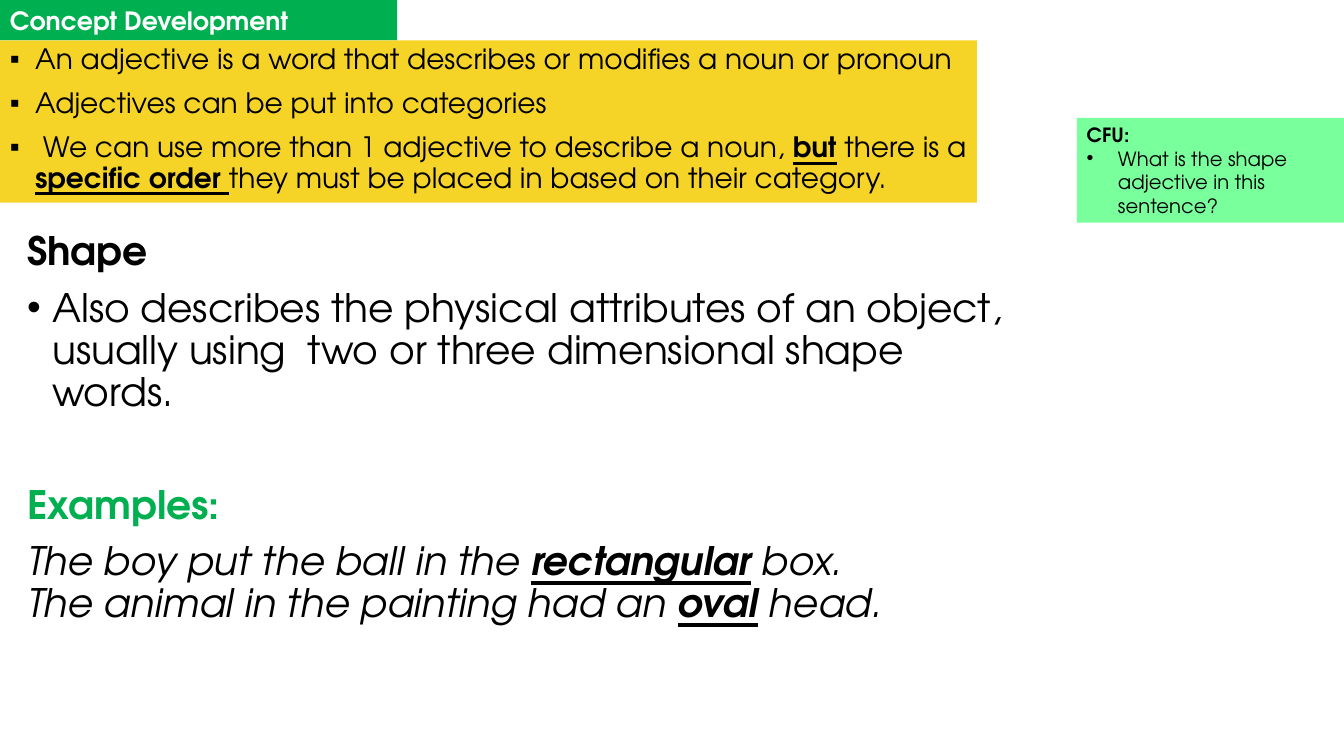
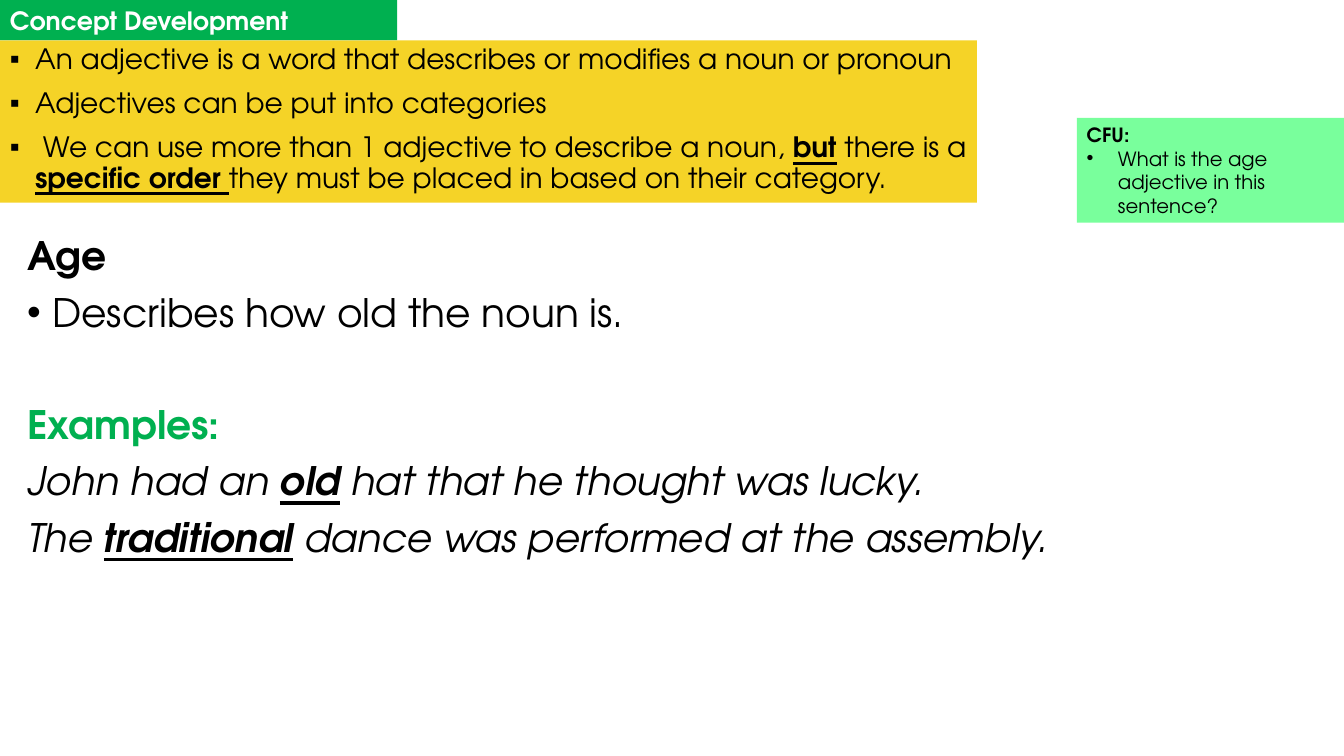
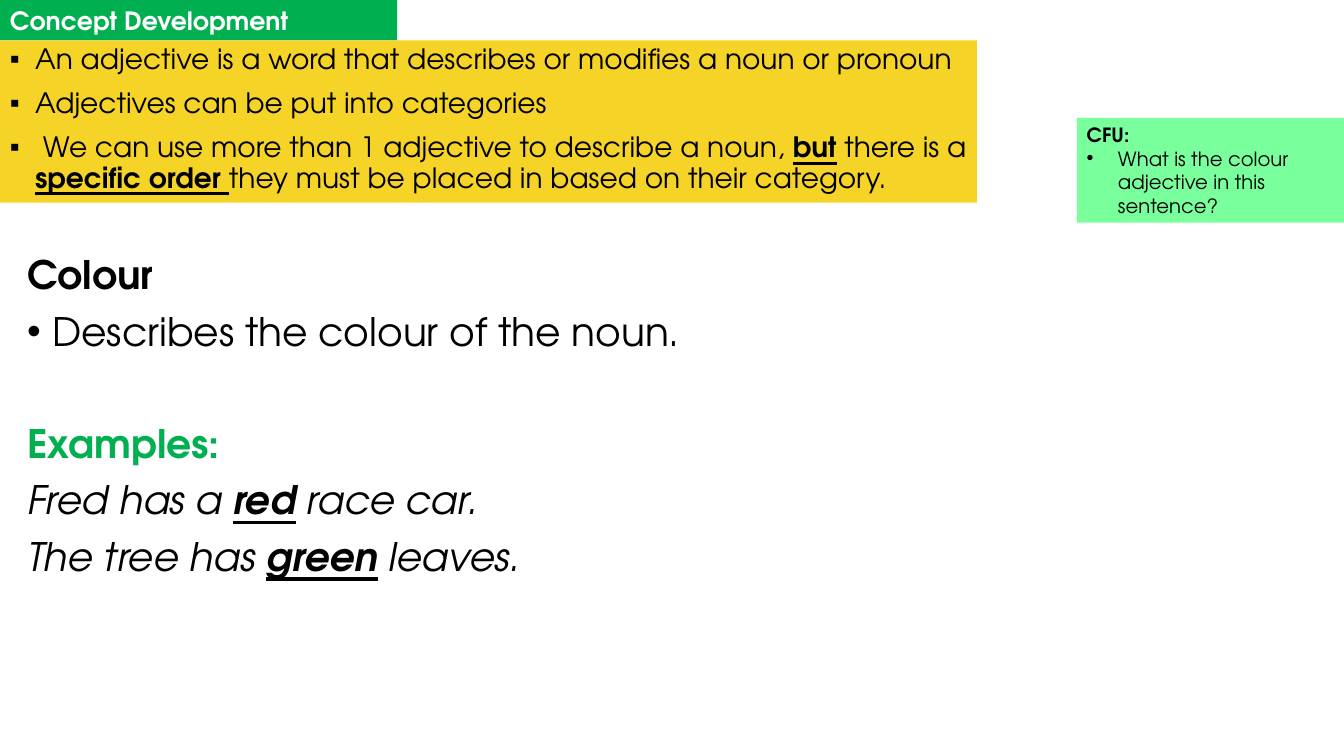
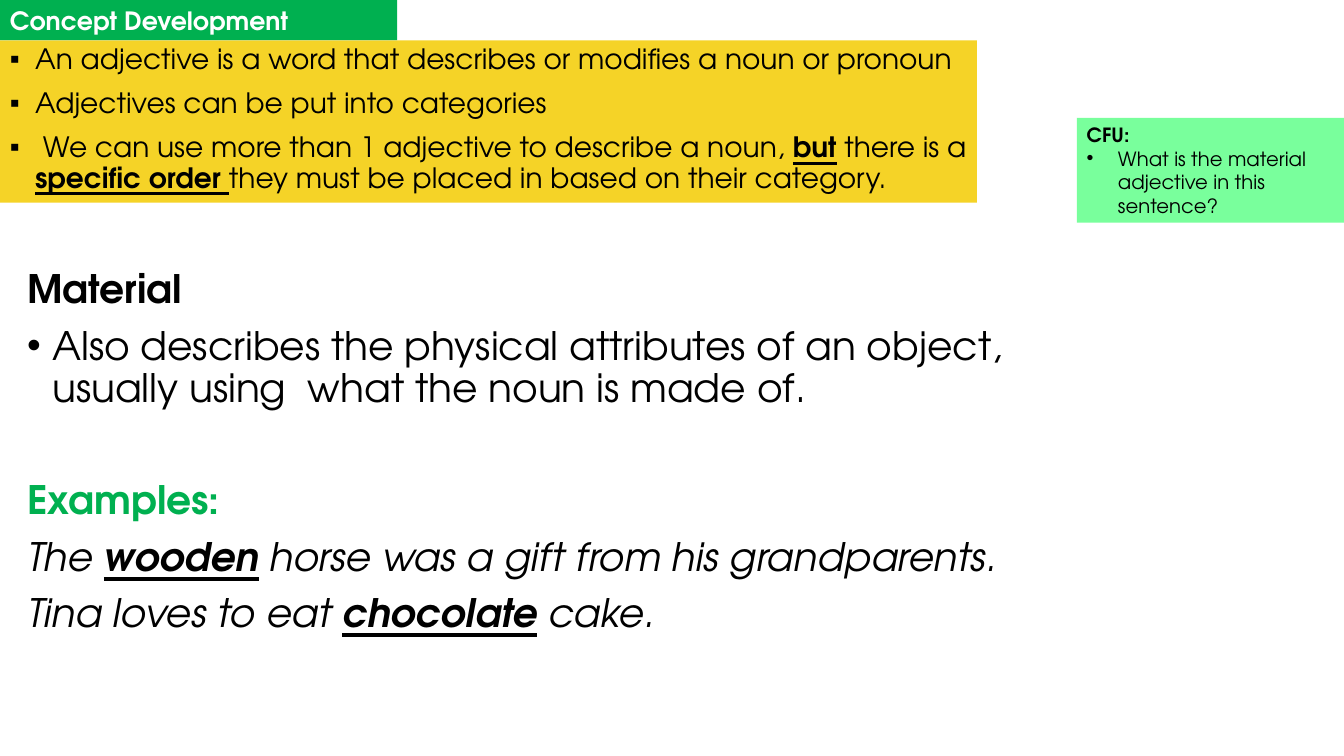
"""Build four lesson slides on kinds of adjectives."""
import pptx
import pptx.util
import pptx.dml.color
import pptx.enum.shapes
import pptx.enum.text
import pptx.oxml.ns
import lxml.etree

WIDE, HIGH = 13.33, 7.5
FONT = "TeX Gyre Adventor"
BLACK, WHITE, GREEN = "000000", "FFFFFF", "00B050"
GOLD, MINT = "F5D327", "79FF9C"

TITLE = "Concept Development"
RULES = [
    "An adjective is a word that describes or modifies a noun or pronoun",
    "Adjectives can be put into categories",
    " We can use more than 1 adjective to describe a noun, *but* there is a "
    "*specific order *they must be placed in based on their category.",
]
TOPICS = [
    dict(name="Shape", top=2.25, width=10.14,
         about="Also describes the physical attributes of an object, "
               "usually using  two or three dimensional shape words.",
         cases=["The boy put the ball in the *rectangular* box.\n"
                "The animal in the painting had an *oval* head."]),
    dict(name="Age", top=2.3, width=12.95,
         about="Describes how old the noun is.",
         cases=["John had an *old* hat that he thought was lucky.",
                "The *traditional* dance was performed at the assembly."]),
    dict(name="Colour", top=2.49, width=12.95,
         about="Describes the colour of the noun.",
         cases=["Fred has a *red* race car.",
                "The tree has *green* leaves."]),
    dict(name="Material", top=2.63, width=10.69,
         about="Also describes the physical attributes of an object, "
               "usually using  what the noun is made of.",
         cases=["The *wooden* horse was a gift from his grandparents.",
                "Tina loves to eat *chocolate* cake."]),
]


def paint(hue):
    return pptx.dml.color.RGBColor.from_string(hue)


def add_box(slide, left, top, width, height, fill=None):
    area = [pptx.util.Inches(n) for n in (left, top, width, height)]
    if fill:
        box = slide.shapes.add_shape(
            pptx.enum.shapes.MSO_SHAPE.RECTANGLE, *area)
        box.shadow.inherit = False
        box.fill.solid()
        box.fill.fore_color.rgb = paint(fill)
        box.line.fill.background()
    else:
        box = slide.shapes.add_textbox(*area)
    frame = box.text_frame
    frame.word_wrap = True
    frame.vertical_anchor = pptx.enum.text.MSO_ANCHOR.TOP
    return frame


def add_bullet(para, mark, indent):
    props = para._p.get_or_add_pPr()
    step = pptx.util.Inches(indent)
    props.set("marL", str(step))
    props.set("indent", str(-step))
    for tag, key, value in (("buFont", "typeface", "Arial"),
                            ("buChar", "char", mark)):
        lxml.etree.SubElement(
            props, pptx.oxml.ns.qn("a:" + tag)).set(key, value)


def add_para(frame, text, size, hue=BLACK, bold=False, italic=False,
             mark=None, indent=0.25, line=1.0, before=0):
    first = frame.paragraphs[0]
    fresh = not first.runs
    para = first if fresh else frame.add_paragraph()
    para.alignment = pptx.enum.text.PP_ALIGN.LEFT
    para.line_spacing = line
    para.space_before = pptx.util.Pt(0 if fresh else before)
    if mark:
        add_bullet(para, mark, indent)
    para.font.size = pptx.util.Pt(size)
    for row, words in enumerate(text.split("\n")):
        if row:
            para.add_line_break()
        for part, piece in enumerate(words.split("*")):
            strong = part % 2 == 1
            run = para.add_run()
            run.text = piece
            font = run.font
            font.name, font.size = FONT, pptx.util.Pt(size)
            font.color.rgb = paint(hue)
            font.bold, font.italic = bold or strong, italic
            font.underline = strong


def add_frame(slide, name):
    band = add_box(slide, 0, 0.4, 9.69, 1.61, GOLD)
    for rule in RULES:
        add_para(band, rule, 20, mark="▪", line=0.9, before=10)
    head = add_box(slide, 0, 0, 3.94, 0.4, GREEN)
    add_para(head, TITLE, 18, WHITE, bold=True)
    check = add_box(slide, WIDE - 2.65, 1.17, 2.65, 1.04, MINT)
    add_para(check, "CFU:", 14, bold=True)
    add_para(check, f"What is the {name.lower()} adjective in this sentence?",
             14, mark="•", indent=0.31)


def add_topic(slide, topic):
    top = topic["top"]
    body = add_box(slide, 0.17, top, topic["width"], HIGH - 0.2 - top)
    look = dict(size=28, line=0.9, before=10)
    add_para(body, topic["name"], bold=True, **look)
    add_para(body, topic["about"], mark="•", **look)
    add_para(body, "Examples:", hue=GREEN, bold=True, **{**look, "before": 50})
    for case in topic["cases"]:
        add_para(body, case, italic=True, **look)


def main():
    deck = pptx.Presentation()
    deck.slide_width = pptx.util.Inches(WIDE)
    deck.slide_height = pptx.util.Inches(HIGH)
    for topic in TOPICS:
        slide = deck.slides.add_slide(deck.slide_layouts[6])
        add_frame(slide, topic["name"])
        add_topic(slide, topic)
    deck.save("out.pptx")


if __name__ == "__main__":
    main()
